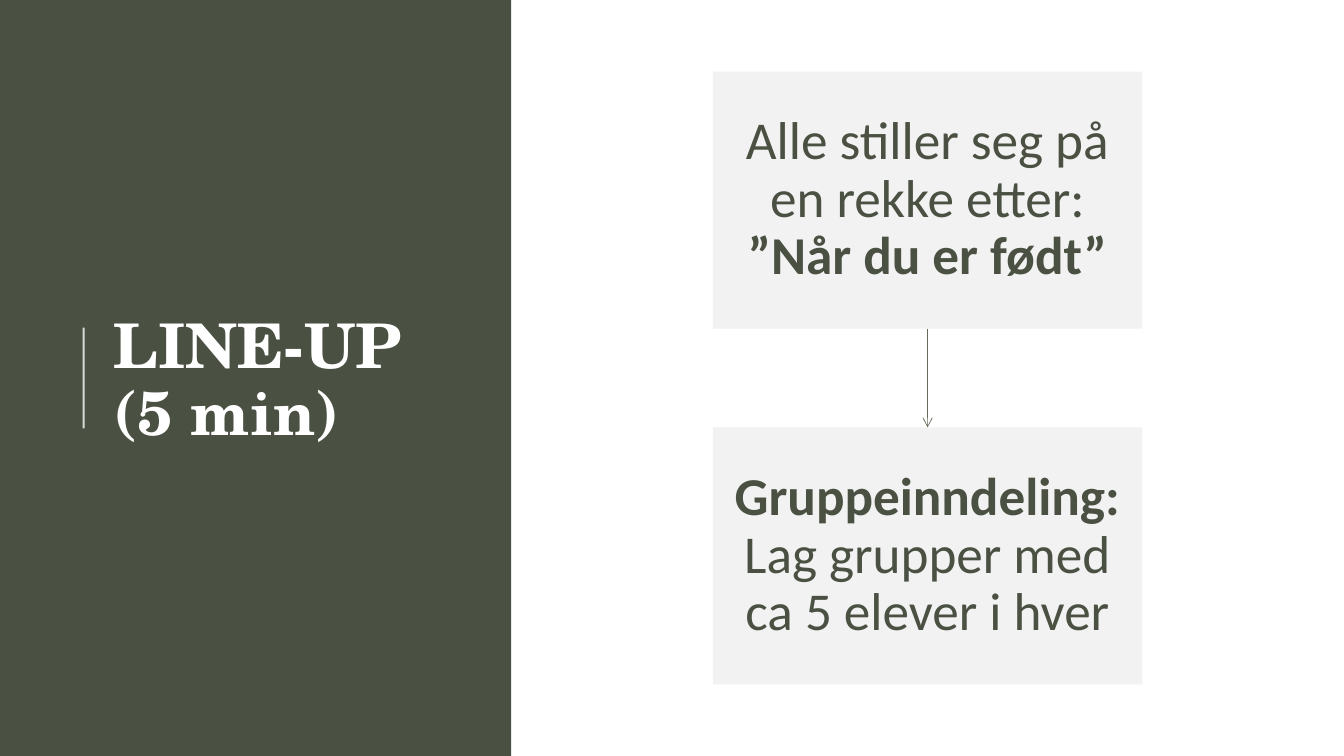
from dataclasses import dataclass

from lxml import etree
from pptx import Presentation
from pptx import util as u
from pptx.dml.color import RGBColor
from pptx.enum import shapes, text
from pptx.oxml import ns


@dataclass(frozen=True)
class Theme:
    green: str = "4A5142"
    arrow: str = "626C57"
    box: str = "F2F2F2"
    white: str = "FFFFFF"
    title_font: str = "TeX Gyre Schola"
    body_font: str = "Calibri"
    title_size: int = 44
    body_size: int = 38


THEME = Theme()
BOX_LEFT, BOX_WIDTH, BOX_HEIGHT = 7.07, 4.26, 2.55
BOX_TOP, BOX_PITCH = 0.71, 3.53
STEPS = [
    [("Alle stiller seg på en rekke etter: ", False), ("”Når du er født”", True)],
    [("Gruppeinndeling:", True), (" Lag grupper med ca 5 elever i hver", False)],
]


def add_run(paragraph, words, font, size, color, bold):
    run = paragraph.add_run()
    run.text = words
    run.font.name = font
    run.font.size = u.Pt(size)
    run.font.bold = bold
    run.font.color.rgb = RGBColor.from_string(color)


def add_rectangle(slide, left, top, width, height, color):
    shape = slide.shapes.add_shape(
        shapes.MSO_SHAPE.RECTANGLE,
        u.Inches(left), u.Inches(top), u.Inches(width), u.Inches(height))
    shape.shadow.inherit = False
    shape.fill.solid()
    shape.fill.fore_color.rgb = RGBColor.from_string(color)
    shape.line.fill.background()
    return shape


def add_step(slide, top, runs):
    box = add_rectangle(slide, BOX_LEFT, top, BOX_WIDTH, BOX_HEIGHT, THEME.box)
    frame = box.text_frame
    frame.word_wrap = True
    frame.vertical_anchor = text.MSO_ANCHOR.MIDDLE
    frame.margin_left = frame.margin_right = u.Inches(0.21)
    frame.margin_top = frame.margin_bottom = u.Inches(0.22)
    paragraph = frame.paragraphs[0]
    paragraph.alignment = text.PP_ALIGN.CENTER
    paragraph.line_spacing = 0.9
    for words, bold in runs:
        add_run(paragraph, words, THEME.body_font, THEME.body_size, THEME.green, bold)
    return box


def add_line(slide, start, end, color, width):
    line = slide.shapes.add_connector(
        shapes.MSO_CONNECTOR.STRAIGHT, *(u.Inches(value) for value in start + end))
    line.line.color.rgb = RGBColor.from_string(color)
    line.line.width = u.Pt(width)
    etree.SubElement(line.element.spPr, ns.qn("a:effectLst"))
    return line


def add_accent(slide):
    accent = add_line(slide, (0.83, 4.25), (0.83, 3.25), THEME.white, 1.5)
    color = accent.line._get_or_add_ln().find(".//" + ns.qn("a:srgbClr"))
    etree.SubElement(color, ns.qn("a:alpha"), val="80000")


def add_arrow(slide, upper, lower):
    middle = BOX_LEFT + BOX_WIDTH / 2
    arrow = add_line(slide, (middle, BOX_TOP + BOX_HEIGHT),
                     (middle, BOX_TOP + BOX_PITCH), THEME.arrow, 0.5)
    arrow.begin_connect(upper, 2)
    arrow.end_connect(lower, 0)
    etree.SubElement(arrow.line._get_or_add_ln(), ns.qn("a:tailEnd"), type="arrow")


def set_title(slide, lines):
    title = slide.shapes.title
    title.left, title.top = u.Inches(1.03), u.Inches(0.78)
    title.width, title.height = u.Inches(3.69), u.Inches(6.02)
    frame = title.text_frame
    frame.word_wrap = True
    frame.auto_size = text.MSO_AUTO_SIZE.NONE
    frame.vertical_anchor = text.MSO_ANCHOR.MIDDLE
    paragraph = frame.paragraphs[0]
    paragraph.alignment = text.PP_ALIGN.LEFT
    paragraph.line_spacing = 0.9
    for index, words in enumerate(lines):
        if index:
            paragraph.add_line_break()
        add_run(paragraph, words, THEME.title_font, THEME.title_size, THEME.white, True)
    title.element.getparent().append(title.element)


def main():
    presentation = Presentation()
    presentation.slide_width = u.Inches(13.33)
    presentation.slide_height = u.Inches(7.5)
    slide = presentation.slides.add_slide(presentation.slide_layouts[5])
    add_rectangle(slide, 0, 0, 5.07, 7.5, THEME.green)
    add_accent(slide)
    set_title(slide, ["LINE-UP", "(5 min)"])
    upper, lower = [add_step(slide, BOX_TOP + index * BOX_PITCH, runs)
                    for index, runs in enumerate(STEPS)]
    add_arrow(slide, upper, lower)
    presentation.save("out.pptx")


if __name__ == "__main__":
    main()
